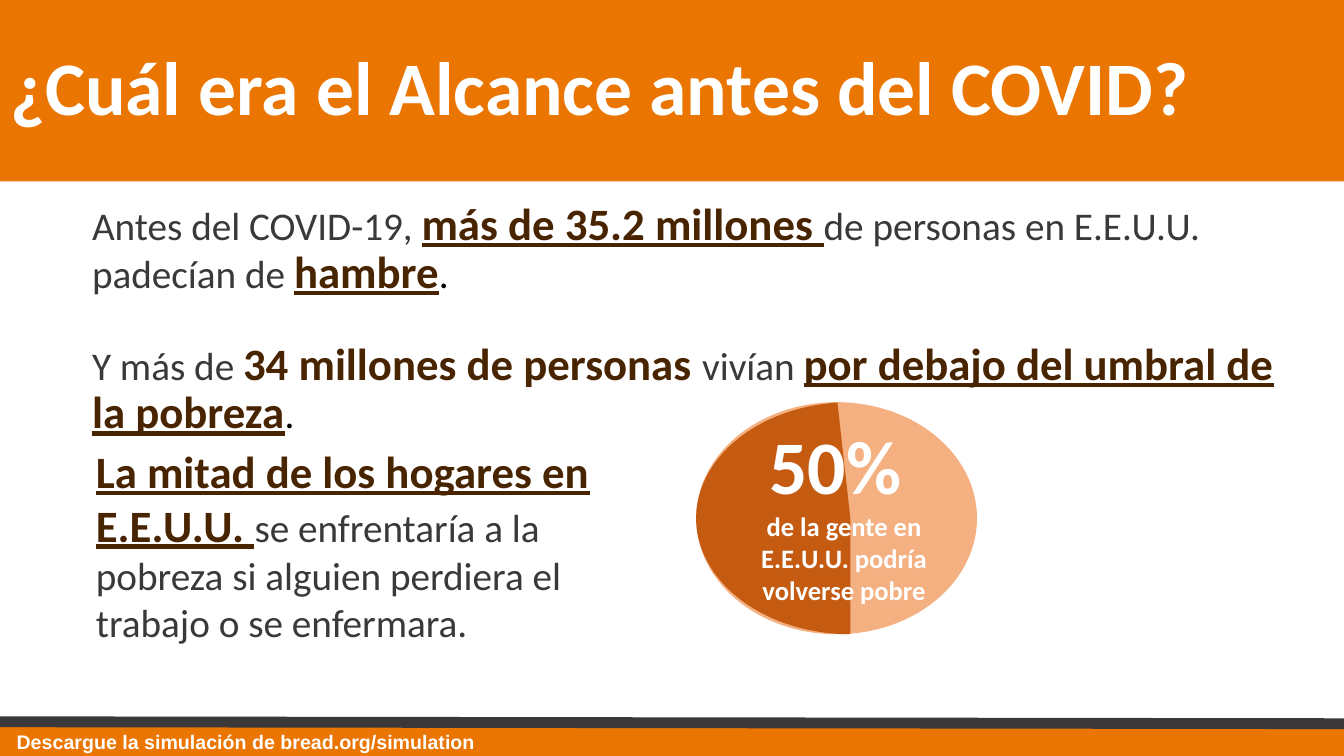
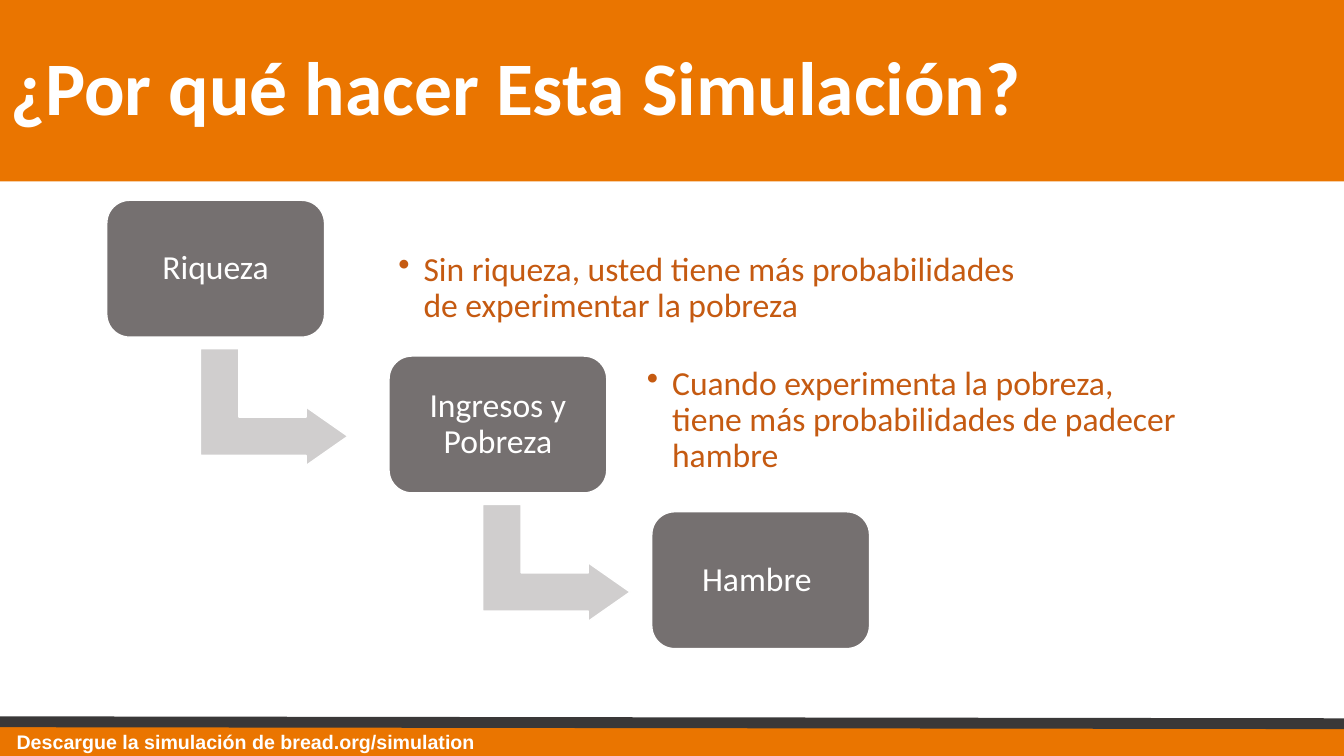
from dataclasses import dataclass

from lxml import etree
from pptx import Presentation
from pptx.dml.color import RGBColor
from pptx.enum.shapes import MSO_CONNECTOR, MSO_SHAPE
from pptx.enum.text import MSO_ANCHOR, MSO_AUTO_SIZE, PP_ALIGN
from pptx.oxml.ns import qn
from pptx.util import Inches, Pt

# Colours
ORANGE = RGBColor(0xEA, 0x75, 0x00)
RUST = RGBColor(0xC5, 0x5A, 0x11)
PEACH = RGBColor(0xF4, 0xB0, 0x81)
BROWN = RGBColor(0x48, 0x24, 0x00)
CHARCOAL = RGBColor(0x3A, 0x38, 0x38)
GREY = RGBColor(0x75, 0x70, 0x70)
SILVER = RGBColor(0xD0, 0xCE, 0xCE)
BLACK = RGBColor(0x00, 0x00, 0x00)
WHITE = RGBColor(0xFF, 0xFF, 0xFF)

# Enum members
RECTANGLE = MSO_SHAPE.RECTANGLE
ROUNDED = MSO_SHAPE.ROUNDED_RECTANGLE
ELLIPSE = MSO_SHAPE.OVAL
PIE = MSO_SHAPE.PIE
BENT_ARROW = MSO_SHAPE.BENT_UP_ARROW
STRAIGHT = MSO_CONNECTOR.STRAIGHT
TOP, MIDDLE = MSO_ANCHOR.TOP, MSO_ANCHOR.MIDDLE
LEFT, CENTER = PP_ALIGN.LEFT, PP_ALIGN.CENTER
NO_FIT = MSO_AUTO_SIZE.NONE

FONT = "Calibri"
FOOTER_FONT = "Arial"
TITLE_AND_BODY, TITLE_ONLY = 1, 5  # layouts of the template
GRID = 100  # columns and rows on a slide
FOOTER = "Descargue la simulación de bread.org/simulation"


@dataclass
class Span:
    """A run of text with its own look."""
    text: str
    size: float
    color: RGBColor
    bold: bool = False
    underline: bool = False
    font: str = FONT


def plain(text):
    return Span(text, 28, CHARCOAL)


def strong(text, underline=True):
    return Span(text, 32, BROWN, True, underline)


def stop():
    return Span(".", 28, BLACK)


class SlideMaker:
    """Holds the shared style and the current slide."""

    def __init__(self):
        self.deck = Presentation()
        self.deck.slide_width = Inches(13.333)
        self.deck.slide_height = Inches(7.5)
        self.page = None

    def place(self, x, y, width, height):
        """Turn grid columns and rows into lengths."""
        column = self.deck.slide_width / GRID
        row = self.deck.slide_height / GRID
        return round(x * column), round(y * row), round(width * column), round(height * row)

    def new_page(self, title, layout):
        self.page = self.deck.slides.add_slide(self.deck.slide_layouts[layout])
        self.footer()
        box = self.placeholder(self.page.shapes.title, (0, 0, 100, 24))
        box.fill.solid()
        box.fill.fore_color.rgb = ORANGE
        self.fill_text(box, [[Span(title, 54, WHITE, True)]], anchor=MIDDLE, spacing=0.9)

    def footer(self):
        self.shape(RECTANGLE, (0, 95.73, 100, 4.27), ORANGE)
        x1, y1, x2, y2 = self.place(0, 95.47, 100, 95.73)
        rule = self.page.shapes.add_connector(STRAIGHT, x1, y1, x2, y2)
        rule.line.color.rgb = CHARCOAL
        rule.line.width = Pt(7.75)
        etree.SubElement(rule._element.spPr, qn("a:effectLst"))
        self.text((0.5, 95.9, 52.1, 4.5), [[Span(FOOTER, 14, WHITE, True, font=FOOTER_FONT)]])

    def placeholder(self, box, area):
        box.left, box.top, box.width, box.height = self.place(*area)
        return box

    def body(self, area, paragraphs, gap):
        box = self.placeholder(self.page.placeholders[1], area)
        self.fill_text(box, paragraphs, spacing=0.9, gap=gap, bullet=False)

    def text(self, area, paragraphs, **style):
        box = self.page.shapes.add_textbox(*self.place(*area))
        self.fill_text(box, paragraphs, **style)

    def shape(self, kind, area, fill, outline=None, adjustments=()):
        shape = self.page.shapes.add_shape(kind, *self.place(*area))
        shape.shadow.inherit = False
        shape.fill.solid()
        shape.fill.fore_color.rgb = fill
        if outline is None:
            shape.line.fill.background()
        else:
            shape.line.color.rgb = outline
            shape.line.width = Pt(1)
        for index, value in enumerate(adjustments):
            shape.adjustments[index] = value
        return shape

    def set_bullet(self, para, bullet):
        props = para._p.get_or_add_pPr()
        indent = Inches(0.25) if bullet else 0
        props.set("marL", str(indent))
        props.set("indent", str(-indent))
        if bullet:
            color = etree.SubElement(props, qn("a:buClr"))
            etree.SubElement(color, qn("a:srgbClr")).set("val", str(RUST))
            etree.SubElement(props, qn("a:buChar")).set("char", "•")
        else:
            etree.SubElement(props, qn("a:buNone"))

    def fill_text(self, box, paragraphs, anchor=TOP, align=LEFT, spacing=1.0,
                  gap=0, bullet=None, inset=0.05):
        frame = box.text_frame
        frame.word_wrap = True
        frame.auto_size = NO_FIT
        frame.vertical_anchor = anchor
        frame.margin_left = frame.margin_right = Inches(0.1)
        frame.margin_top = frame.margin_bottom = Inches(inset)
        for index, spans in enumerate(paragraphs):
            para = frame.add_paragraph() if index else frame.paragraphs[0]
            if bullet is not None:
                self.set_bullet(para, bullet)
            para.alignment = align
            para.line_spacing = spacing
            para.space_before = Pt(gap if index else 0)
            for span in spans:
                run = para.add_run()
                run.text = span.text
                run.font.name = span.font
                run.font.size = Pt(span.size)
                run.font.bold = span.bold
                run.font.underline = span.underline
                run.font.color.rgb = span.color

    def step(self, x, y, label):
        box = self.shape(ROUNDED, (x, y, 16.2, 18.1), GREY, WHITE, (0.167,))
        self.fill_text(box, [[Span(label, 24, WHITE)]], anchor=MIDDLE, align=CENTER,
                       spacing=0.9, inset=0.1)

    def step_arrow(self, x, y):
        arrow = self.shape(BENT_ARROW, (x, y, 8.7, 19.5), SILVER, WHITE, (0.328, 0.25, 0.358))
        arrow.rotation = 90

    def step_note(self, area, note):
        self.text(area, [[Span(note, 24, RUST)]], anchor=MIDDLE, spacing=0.9,
                  bullet=True, inset=0.1)


def scope_slide(maker):
    maker.new_page("¿Cuál era el Alcance antes del COVID?", TITLE_AND_BODY)
    maker.body((6.1, 26, 89.7, 28.8), [
        [plain("Antes del COVID-19, "), strong("más de 35.2 millones "),
         plain("de personas en E.E.U.U. padecían de "), strong("hambre"), stop()],
        [plain("Y más de "), strong("34 millones de personas ", underline=False),
         plain("vivían "), strong("por debajo del umbral de la pobreza"), stop()],
    ], gap=31)
    maker.text((6.4, 58, 44.3, 21), [[
        strong("La mitad de los hogares en E.E.U.U. "),
        plain("se enfrentaría a la pobreza si alguien perdiera el trabajo o se enfermara."),
    ]])
    # Half-filled disc with its caption
    maker.shape(ELLIPSE, (51.8, 53.2, 20.9, 30.7), PEACH)
    maker.shape(PIE, (51.8, 53.2, 22.95, 30.7), RUST, adjustments=(54, 158.18))
    maker.text((53.5, 54.8, 18.6, 24.3), [
        [Span("50% ", 54, WHITE, True)],
        [Span("de la gente en E.E.U.U. podría volverse pobre", 19, WHITE, True)],
    ], align=CENTER)


def reasons_slide(maker):
    maker.new_page("¿Por qué hacer Esta Simulación?", TITLE_ONLY)
    # Staircase: column of the step, label, then place and words of its note
    steps = [
        (7.95, "Riqueza", (28.9, 30.8, 49.05, 14.7),
         "Sin riqueza, usted tiene más probabilidades de experimentar la pobreza"),
        (28.95, "Ingresos y Pobreza", (47.4, 48.3, 41.7, 14.7),
         "Cuando experimenta la pobreza, tiene más probabilidades de padecer hambre"),
        (48.5, "Hambre ", None, None),
    ]
    for index, (x, label, area, note) in enumerate(steps):
        y = 26.5 + 20.6 * index
        if note:
            maker.step_arrow(x + 8.1, y + 17.6)
        maker.step(x, y, label)
        if note:
            maker.step_note(area, note)


def main():
    maker = SlideMaker()
    scope_slide(maker)
    reasons_slide(maker)
    maker.deck.save("out.pptx")


if __name__ == "__main__":
    main()
